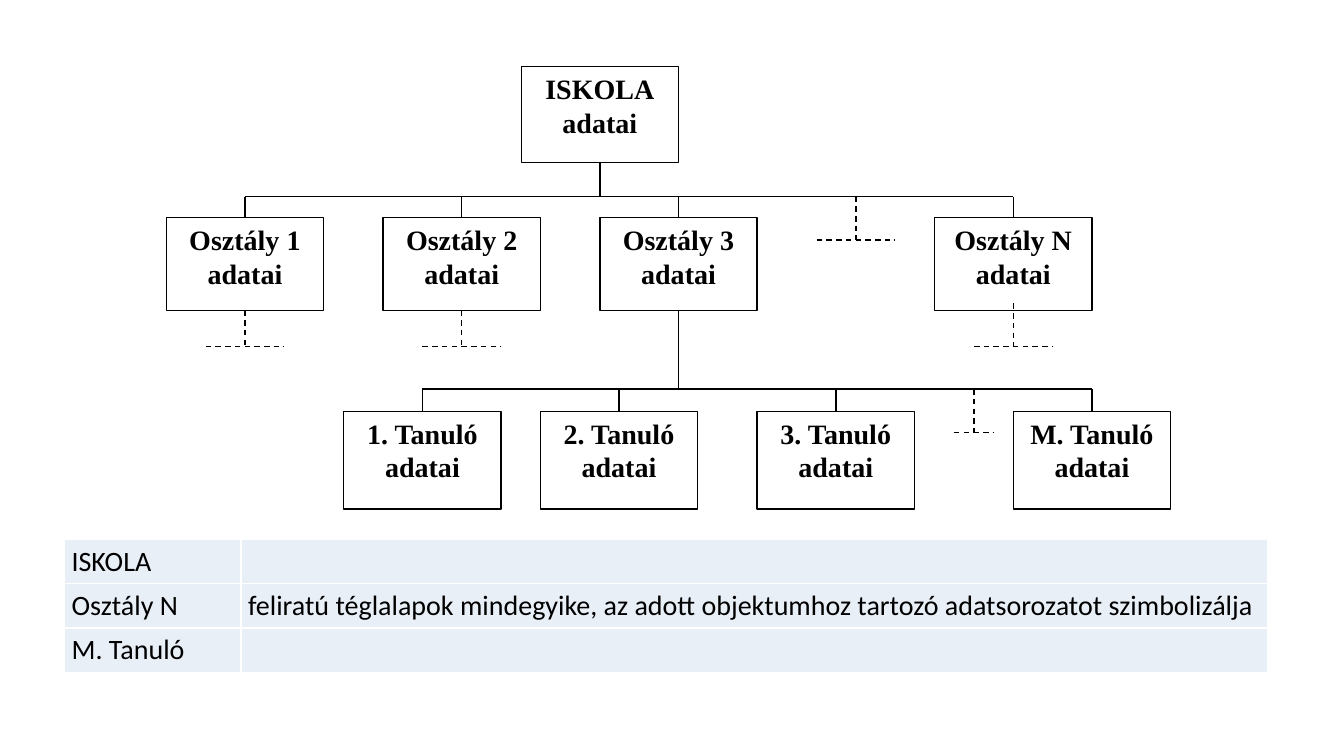
from lxml import etree
from pptx import Presentation
from pptx import util as u
from pptx.dml.color import RGBColor
from pptx.enum import dml, shapes, text
from pptx.oxml.ns import qn

PX = 9144
COLORS = {"ink": "000000", "band": "E9EFF7", "grid": "FFFFFF"}
BOX_WIDTH = 156
SCHOOL_TOP, SCHOOL_HEIGHT = 66, 95
CLASS_BUS, CLASS_TOP, CLASS_HEIGHT = 195, 216, 92
PUPIL_BUS, PUPIL_TOP, PUPIL_HEIGHT = 386, 408, 97
STUB_DROP = 43
CLASS_STUB_END = 344
SCHOOL_CENTER, THIRD_CLASS_CENTER = 595, 673
CLASSES = {"Osztály 1": 243, "Osztály 2": 458, "Osztály 3": THIRD_CLASS_CENTER, "Osztály N": 1005}
PUPILS = {"1. Tanuló": 419, "2. Tanuló": 614, "3. Tanuló": 829, "M. Tanuló": 1083}
LEGEND = [
    ("ISKOLA", ""),
    ("Osztály N", "feliratú téglalapok mindegyike, az adott objektumhoz tartozó adatsorozatot szimbolizálja"),
    ("M. Tanuló", ""),
]


def px(length):
    """Convert whole px to EMU."""
    return u.Emu(length * PX)


def color(name):
    """Look up a named colour."""
    return RGBColor.from_string(COLORS[name])


def style_font(font, family, bold=False):
    """Give a font its family, weight, size and colour."""
    font.name, font.bold, font.size = family, bold, u.Pt(20)
    font.color.rgb = color("ink")


def add_box(slide, kind, label, center, top, height):
    """Draw one data box centred on a given x."""
    box = slide.shapes.add_shape(kind, px(center - BOX_WIDTH // 2), px(top), px(BOX_WIDTH), px(height))
    box.shadow.inherit = False
    box.fill.background()
    box.line.color.rgb = color("ink")
    box.line.width = u.Pt(1)
    frame = box.text_frame
    frame.word_wrap = True
    frame.vertical_anchor = text.MSO_ANCHOR.TOP
    frame.text = f"{label}\nadatai"
    for paragraph in frame.paragraphs:
        paragraph.alignment = text.PP_ALIGN.CENTER
        style_font(paragraph.runs[0].font, "Times New Roman", bold=True)


def add_line(slide, x1, y1, x2, y2, dashed=False):
    """Draw a thin straight line, dashed on request."""
    link = slide.shapes.add_connector(shapes.MSO_CONNECTOR.STRAIGHT, px(x1), px(y1), px(x2), px(y2))
    link.line.color.rgb = color("ink")
    link.line.width = u.Pt(1)
    if dashed:
        link.line.dash_style = dml.MSO_LINE.DASH
    etree.SubElement(link._element.spPr, qn("a:effectLst"))


def add_stub(slide, center, top, bottom, half_width=39):
    """Draw a dashed T that stands for an omitted branch."""
    add_line(slide, center, top, center, bottom, dashed=True)
    add_line(slide, center - half_width, bottom, center + half_width, bottom, dashed=True)


def add_level(slide, kind, members, bus, top, height):
    """Draw a row of boxes hanging from a horizontal line."""
    centers = list(members.values())
    add_line(slide, min(centers), bus, max(centers), bus)
    for label, center in members.items():
        add_box(slide, kind, label, center, top, height)
        add_line(slide, center, bus, center, top)


def add_borders(cell):
    """Give a cell thin borders on all four sides."""
    properties = cell._tc.get_or_add_tcPr()
    for side in ("lnL", "lnR", "lnT", "lnB"):
        border = etree.SubElement(properties, qn(f"a:{side}"), w=str(u.Pt(0.96)))
        fill = etree.SubElement(border, qn("a:solidFill"))
        etree.SubElement(fill, qn("a:srgbClr"), val=COLORS["grid"])


def add_legend(slide):
    """Draw the table that explains the boxes."""
    widths, row_height = (175, 1018), 43
    table = slide.shapes.add_table(
        len(LEGEND), len(widths), px(64), px(535), px(sum(widths)), px(row_height * len(LEGEND))
    ).table
    table.first_row = table.horz_banding = False
    for column, width in zip(table.columns, widths):
        column.width = px(width)
    for row, entries in zip(table.rows, LEGEND):
        for cell, entry in zip(row.cells, entries):
            add_borders(cell)
            cell.fill.solid()
            cell.fill.fore_color.rgb = color("band")
            cell.margin_left = cell.margin_right = px(7)
            cell.margin_top = cell.margin_bottom = px(5)
            paragraph = cell.text_frame.paragraphs[0]
            paragraph.text = entry
            style_font(paragraph.font, "Calibri")
            for run in paragraph.runs:
                style_font(run.font, "Calibri")


def main():
    """Build the school hierarchy slide."""
    deck = Presentation()
    deck.slide_width, deck.slide_height = px(1333), px(750)
    slide = deck.slides.add_slide(deck.slide_layouts[6])
    add_legend(slide)

    process = shapes.MSO_SHAPE.FLOWCHART_PROCESS
    school_bottom = SCHOOL_TOP + SCHOOL_HEIGHT
    class_bottom = CLASS_TOP + CLASS_HEIGHT
    add_box(slide, process, "ISKOLA", SCHOOL_CENTER, SCHOOL_TOP, SCHOOL_HEIGHT)
    add_line(slide, SCHOOL_CENTER, school_bottom, SCHOOL_CENTER, CLASS_BUS)
    add_level(slide, process, CLASSES, CLASS_BUS, CLASS_TOP, CLASS_HEIGHT)
    add_line(slide, THIRD_CLASS_CENTER, class_bottom, THIRD_CLASS_CENTER, PUPIL_BUS)
    add_level(slide, shapes.MSO_SHAPE.RECTANGLE, PUPILS, PUPIL_BUS, PUPIL_TOP, PUPIL_HEIGHT)

    for label in ("Osztály 1", "Osztály 2"):
        add_stub(slide, CLASSES[label], class_bottom, CLASS_STUB_END)
    add_stub(slide, CLASSES["Osztály N"], CLASS_STUB_END - STUB_DROP, CLASS_STUB_END)
    add_stub(slide, 849, CLASS_BUS, CLASS_BUS + STUB_DROP)
    add_stub(slide, 966, PUPIL_BUS, PUPIL_BUS + STUB_DROP, half_width=20)
    deck.save("out.pptx")


if __name__ == "__main__":
    main()
